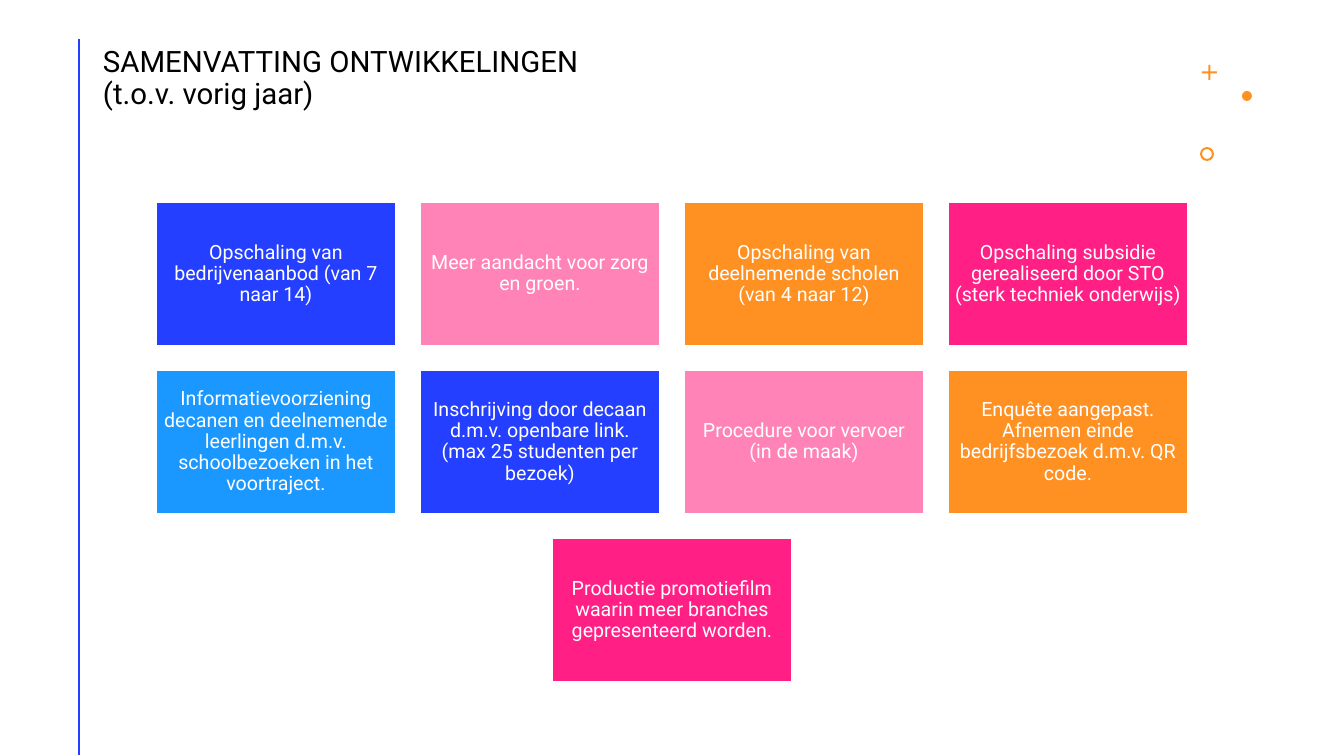
from pptx import Presentation
from pptx.dml.color import RGBColor
from pptx.enum.shapes import MSO_CONNECTOR, MSO_SHAPE
from pptx.enum.text import MSO_ANCHOR, MSO_AUTO_SIZE, PP_ALIGN
from pptx.oxml.ns import qn
from pptx.util import Pt
from lxml import etree

STRAIGHT = MSO_CONNECTOR.STRAIGHT
RECTANGLE, OVAL = MSO_SHAPE.RECTANGLE, MSO_SHAPE.OVAL
CROSS, DONUT = MSO_SHAPE.CROSS, MSO_SHAPE.DONUT
TOP, MIDDLE = MSO_ANCHOR.TOP, MSO_ANCHOR.MIDDLE
LEFT, CENTER = PP_ALIGN.LEFT, PP_ALIGN.CENTER
NO_AUTOFIT = MSO_AUTO_SIZE.NONE

EMU_PER_PX = 914400 / 100.8
TITLE_ONLY_LAYOUT = 5
FONT = "Roboto"
BLUE, SKY, PINK = "243FFF", "1A98FF", "FF83B6"
ORANGE, MAGENTA = "FF9022", "FF1F85"
WHITE, BLACK = "FFFFFF", "000000"

CARD_LEFT, CARD_TOP = 156, 202
CARD_WIDTH, CARD_HEIGHT = 240, 144
COLUMN_PITCH, ROW_PITCH = 264, 168
COLUMNS = 4
CARD_COLORS = [BLUE, PINK, ORANGE, MAGENTA, SKY]
DEVELOPMENTS = [
    "Opschaling van bedrijvenaanbod (van 7 naar 14)",
    "Meer aandacht voor zorg en groen.",
    "Opschaling van deelnemende scholen (van 4 naar 12)",
    "Opschaling subsidie gerealiseerd door STO (sterk techniek onderwijs)",
    "Informatievoorziening decanen en deelnemende leerlingen d.m.v. "
    "schoolbezoeken in het voortraject.",
    "Inschrijving door decaan d.m.v. openbare link. (max 25 studenten per bezoek)",
    "Procedure voor vervoer (in de maak)",
    "Enquête aangepast. Afnemen einde bedrijfsbezoek d.m.v. QR code.",
    "Productie promotiefilm waarin meer branches gepresenteerd worden.",
]


def px(length):
    return round(length * EMU_PER_PX)


def color(hex_string):
    return RGBColor.from_string(hex_string)


def write_text(shape, text, size, text_color, align, anchor, insets):
    frame = shape.text_frame
    frame.word_wrap = True
    frame.auto_size = NO_AUTOFIT
    frame.vertical_anchor = anchor
    horizontal, vertical = insets
    frame.margin_left = frame.margin_right = px(horizontal)
    frame.margin_top = frame.margin_bottom = px(vertical)
    paragraph = frame.paragraphs[0]
    paragraph.text = text
    paragraph.alignment = align
    paragraph.line_spacing = 0.9
    for run in paragraph.runs:
        run.font.name = FONT
        run.font.size = Pt(size)
        run.font.color.rgb = color(text_color)


def add_title(slide, text):
    title = slide.shapes.title
    title.left, title.top = px(93), px(40)
    title.width, title.height = px(1085), px(146)
    write_text(title, text, size=21, text_color=BLACK, align=LEFT,
               anchor=TOP, insets=(10, 7))


def add_filled_shape(slide, kind, left, top, width, height, fill):
    shape = slide.shapes.add_shape(kind, px(left), px(top), px(width), px(height))
    shape.shadow.inherit = False
    shape.fill.solid()
    shape.fill.fore_color.rgb = color(fill)
    shape.line.fill.background()
    return shape


def add_card(slide, left, top, fill, text):
    card = add_filled_shape(slide, RECTANGLE, left, top, CARD_WIDTH, CARD_HEIGHT, fill)
    card.line.color.rgb = color(WHITE)
    card.line.width = Pt(1)
    write_text(card, text, size=14, text_color=WHITE, align=CENTER,
               anchor=MIDDLE, insets=(6, 6))


def add_cards(slide):
    for index, text in enumerate(DEVELOPMENTS):
        row, column = divmod(index, COLUMNS)
        cards_in_row = min(COLUMNS, len(DEVELOPMENTS) - row * COLUMNS)
        offset = (COLUMNS - cards_in_row) * COLUMN_PITCH // 2
        add_card(slide, CARD_LEFT + offset + column * COLUMN_PITCH,
                 CARD_TOP + row * ROW_PITCH,
                 CARD_COLORS[index % len(CARD_COLORS)], text)


def add_side_line(slide):
    line = slide.shapes.add_connector(STRAIGHT, px(79), px(39), px(79), px(755))
    line.line.color.rgb = color(BLUE)
    line.line.width = Pt(2)
    etree.SubElement(line._element.spPr, qn("a:effectLst"))


def add_ornaments(slide):
    plus = add_filled_shape(slide, CROSS, 1202, 65, 15, 15, ORANGE)
    plus.adjustments[0] = 0.43
    add_filled_shape(slide, OVAL, 1242, 91, 10, 10, ORANGE)
    ring = add_filled_shape(slide, DONUT, 1200, 147, 14, 14, ORANGE)
    ring.adjustments[0] = 0.15


def main():
    presentation = Presentation()
    presentation.slide_width, presentation.slide_height = px(1344), px(756)
    slide = presentation.slides.add_slide(presentation.slide_layouts[TITLE_ONLY_LAYOUT])
    add_title(slide, "SAMENVATTING ONTWIKKELINGEN\v(t.o.v. vorig jaar)")
    add_side_line(slide)
    add_ornaments(slide)
    add_cards(slide)
    presentation.save("out.pptx")


if __name__ == "__main__":
    main()
